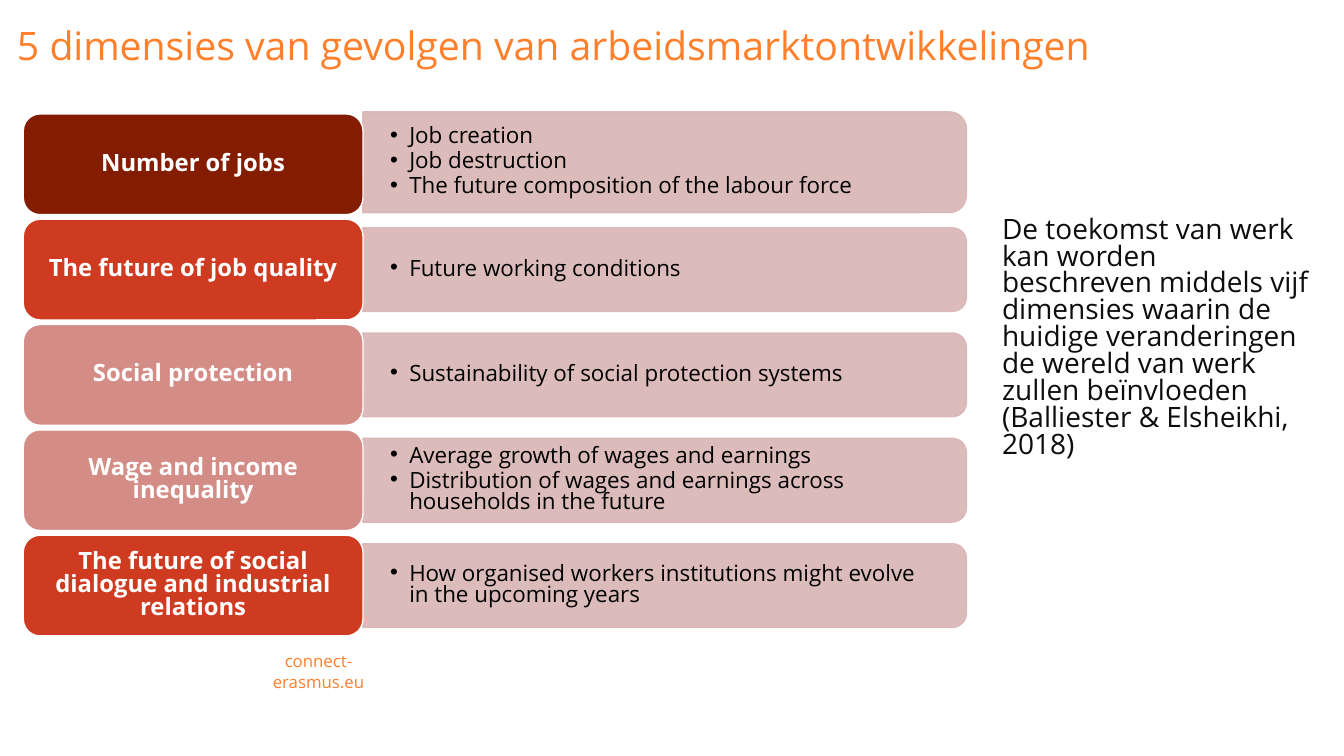
from lxml.etree import SubElement
from pptx import Presentation
from pptx.dml.color import RGBColor
from pptx.enum.shapes import MSO_SHAPE as Shape
from pptx.enum.text import MSO_ANCHOR as Anchor, PP_ALIGN as Align
from pptx.oxml.ns import qn
from pptx.util import Inches, Pt

WIDE, HIGH = Inches(13.33), Inches(7.5)
FONT = "Open Sans"
ORANGE, PINK, WHITE = "FF7F2A", "D9B5B4", "FFFFFF"
DARK, RED, ROSE = "841C00", "CF3B20", "D38D86"

# Rows: heading, heading colour, bullets
ROWS = [
    ("Number of jobs", DARK,
     ["Job creation", "Job destruction",
      "The future composition of the labour force"]),
    ("The future of job quality", RED, ["Future working conditions"]),
    ("Social protection", ROSE,
     ["Sustainability of social protection systems"]),
    ("Wage and income inequality", ROSE,
     ["Average growth of wages and earnings",
      "Distribution of wages and earnings across households in the future"]),
    ("The future of social dialogue and industrial relations", RED,
     ["How organised workers institutions might evolve in the upcoming years"]),
]

# Row layout in percent of the slide
HEAD_X, HEAD_W, HEAD_H = 1.73, 25.28, 13.33
LIST_X, LIST_W, LIST_H = 27, 44.9, 11.07
FIRST, STEP = 21.73, 13.93


def paint(color):
    return RGBColor.from_string(color)


def frame(x, y, w, h):
    """Turn percent of the slide into lengths."""
    return (int(WIDE * x / 100), int(HIGH * y / 100),
            int(WIDE * w / 100), int(HIGH * h / 100))


def style(shape, fill, line):
    shape.shadow.inherit = False
    shape.fill.solid()
    shape.fill.fore_color.rgb = paint(fill)
    shape.line.color.rgb = paint(line)
    shape.line.width = Pt(1)


def write(shape, lines, size, color, bold=False, align=Align.LEFT,
          anchor=Anchor.MIDDLE, inset=(0.1, 0.05), space=0.8):
    text = shape.text_frame
    text.word_wrap = True
    text.vertical_anchor = anchor
    text.margin_left = text.margin_right = Inches(inset[0])
    text.margin_top = text.margin_bottom = Inches(inset[1])
    text.text = "\n".join(lines)
    for para in text.paragraphs:
        para.alignment = align
        para.line_spacing = space
        for run in para.runs:
            run.font.name = FONT
            run.font.size = Pt(size)
            run.font.bold = bold
            run.font.color.rgb = paint(color)
    return text


def label(slide, place, words, size, color, **look):
    write(slide.shapes.add_textbox(*frame(*place)), [words], size, color, **look)


def panel(slide, mid, high):
    """A bar rounded on its right side, made by a quarter turn."""
    x, y, w, h = frame(LIST_X, mid - high / 2, LIST_W, high)
    shift = (w - h) // 2
    bar = slide.shapes.add_shape(Shape.ROUND_2_SAME_RECTANGLE,
                                 x + shift, y - shift, h, w)
    bar.rotation = 90
    style(bar, PINK, PINK)
    for tint in bar._element.spPr.iter(qn("a:srgbClr")):
        SubElement(tint, qn("a:alpha"), val="90000")


def points(slide, mid, high, lines):
    box = slide.shapes.add_textbox(*frame(LIST_X, mid - high / 2, LIST_W, high))
    text = write(box, lines, 16, "000000", inset=(0.27, 0.14))
    for para in text.paragraphs:
        para.level = 1
        para.space_after = Pt(2.4)
        props = para._p.get_or_add_pPr()
        props.set("marL", str(Inches(0.19)))
        props.set("indent", str(-Inches(0.19)))
        SubElement(props, qn("a:buFont"), typeface="Arial")
        SubElement(props, qn("a:buChar"), char="•")


def heading(slide, mid, words, fill):
    tile = slide.shapes.add_shape(
        Shape.ROUNDED_RECTANGLE,
        *frame(HEAD_X, mid - HEAD_H / 2, HEAD_W, HEAD_H))
    style(tile, fill, WHITE)
    write(tile, [words], 17, WHITE, bold=True, align=Align.CENTER,
          inset=(0.07, 0.04))


def main():
    deck = Presentation()
    deck.slide_width, deck.slide_height = WIDE, HIGH
    slide = deck.slides.add_slide(deck.slide_layouts[6])

    # Title, side text and footer
    label(slide, (0.53, 2, 99, 7.73),
          "5 dimensies van gevolgen van arbeidsmarktontwikkelingen",
          28, ORANGE, anchor=Anchor.BOTTOM, space=0.9)
    label(slide, (73.82, 28.13, 24.46, 41.07),
          "De toekomst van werk kan worden beschreven middels vijf dimensies "
          "waarin de huidige veranderingen de wereld van werk zullen "
          "beïnvloeden (Balliester & Elsheikhi, 2018)",
          20, "0D0D0D", anchor=Anchor.TOP)
    label(slide, (17.1, 86.8, 13.2, 4), "connect-erasmus.eu",
          12, ORANGE, align=Align.CENTER, inset=(0.15, 0.05), space=1.0)

    # Five rows; the first panel is taller and sits slightly higher
    for i, (words, fill, lines) in enumerate(ROWS):
        mid = FIRST + i * STEP
        high, rise = (LIST_H, 0) if i else (HEAD_H, 0.27)
        panel(slide, mid - rise, high)
        points(slide, mid - rise, high, lines)
        heading(slide, mid, words, fill)

    deck.save("out.pptx")


if __name__ == "__main__":
    main()
